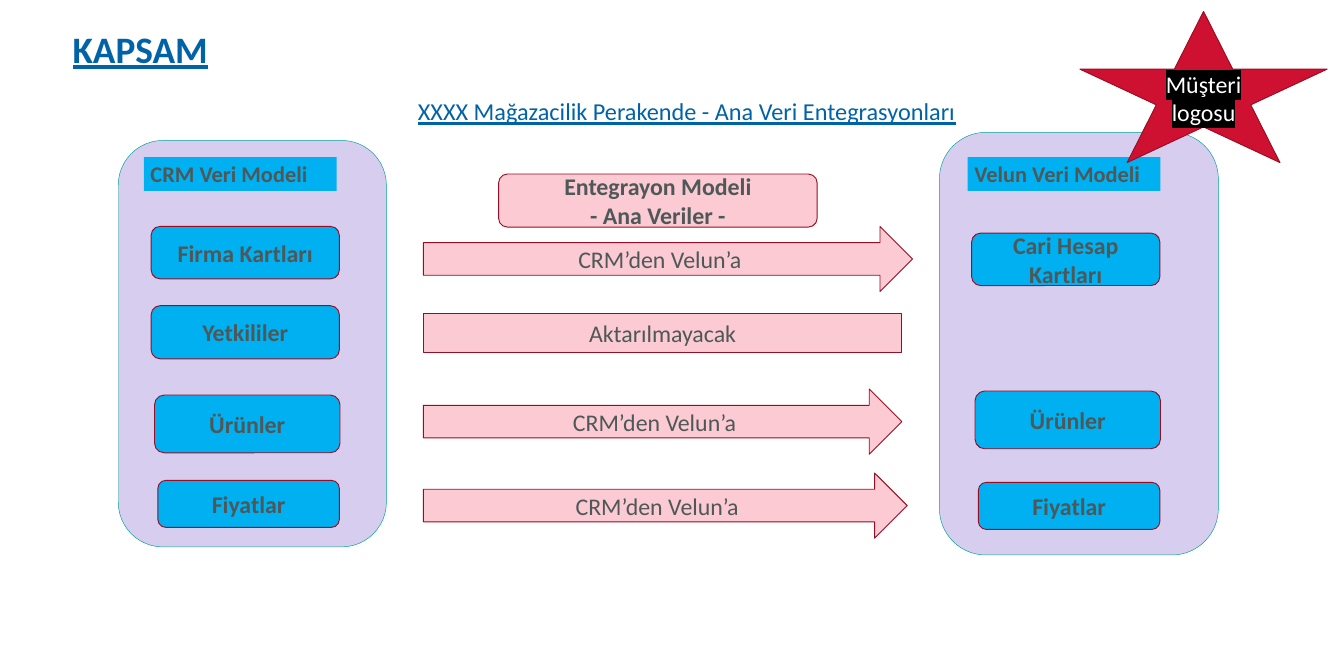
from dataclasses import dataclass
from typing import NamedTuple, Optional

from lxml.etree import SubElement
from pptx import Presentation
from pptx.dml.color import RGBColor
from pptx.enum.shapes import MSO_SHAPE
from pptx.enum.text import MSO_ANCHOR, MSO_AUTO_SIZE, PP_ALIGN
from pptx.oxml.ns import qn
from pptx.util import Inches, Pt


@dataclass(frozen=True)
class Theme:
    font: str = "Calibri"
    heading: str = "0063A8"
    text: str = "4F5858"
    white: str = "FFFFFF"
    highlight: str = "000000"
    panel: str = "D7CEEF"
    panel_line: str = "00A19B"
    card: str = "00B0F0"
    flow: str = "FBCAD2"
    star: str = "CE1130"
    outline: str = "980D24"
    title_size: float = 40
    subtitle_size: float = 26
    label_size: float = 24
    body_size: float = 25.6


class Area(NamedTuple):
    left: float
    top: float
    width: float
    height: float


class Card(NamedTuple):
    text: str
    area: Area


class Flow(NamedTuple):
    text: str
    kind: MSO_SHAPE
    area: Area


class Model(NamedTuple):
    name: str
    panel: Area
    label: Area
    cards: list[Card]


THEME = Theme()
FLOW_LEFT = 6.3
TO_VELUN = "CRM’den Velun’a"

MODELS = [
    Model("CRM Veri Modeli", Area(1.76, 2.09, 3.99, 6.05), Area(2.14, 2.34, 2.87, 0.5), [
        Card("Firma Kartları", Area(2.25, 3.37, 2.8, 0.78)),
        Card("Yetkililer", Area(2.25, 4.55, 2.8, 0.79)),
        Card("Ürünler", Area(2.3, 5.88, 2.76, 0.86)),
        Card("Fiyatlar", Area(2.35, 7.15, 2.7, 0.7)),
    ]),
    Model("Velun Veri Modeli", Area(13.98, 1.97, 4.15, 6.29), Area(14.4, 2.34, 2.87, 0.5), [
        Card("Cari Hesap Kartları", Area(14.46, 3.47, 2.8, 0.78)),
        Card("Ürünler", Area(14.51, 5.82, 2.76, 0.86)),
        Card("Fiyatlar", Area(14.56, 7.18, 2.7, 0.7)),
    ]),
]

FLOWS = [
    Flow(TO_VELUN, MSO_SHAPE.RIGHT_ARROW, Area(FLOW_LEFT, 3.37, 7.28, 0.97)),
    Flow("Aktarılmayacak", MSO_SHAPE.RECTANGLE, Area(FLOW_LEFT, 4.66, 7.12, 0.59)),
    Flow(TO_VELUN, MSO_SHAPE.RIGHT_ARROW, Area(FLOW_LEFT, 5.79, 7.12, 0.97)),
    Flow(TO_VELUN, MSO_SHAPE.RIGHT_ARROW, Area(FLOW_LEFT, 7.04, 7.2, 0.97)),
]


def inches(area: Area) -> list:
    return [Inches(value) for value in area]


def write(box, lines: list[str], size: float, color: str = THEME.text, bold: bool = False,
          underline: bool = False, align: PP_ALIGN = PP_ALIGN.CENTER,
          anchor: MSO_ANCHOR = MSO_ANCHOR.MIDDLE, wrap: bool = True) -> None:
    frame = box.text_frame
    frame.auto_size = MSO_AUTO_SIZE.NONE
    frame.word_wrap = wrap
    frame.vertical_anchor = anchor
    frame.text = "\n".join(lines)
    for para in frame.paragraphs:
        para.alignment = align
        font = para.font
        font.name, font.size = THEME.font, Pt(size)
        font.bold, font.underline = bold, underline
        font.color.rgb = RGBColor.from_string(color)


def draw(page, kind: MSO_SHAPE, area: Area, fill: str,
         line: Optional[str] = THEME.outline, weight: float = 1):
    shape = page.shapes.add_shape(kind, *inches(area))
    shape.shadow.inherit = False
    shape.fill.solid()
    shape.fill.fore_color.rgb = RGBColor.from_string(fill)
    if line:
        shape.line.color.rgb = RGBColor.from_string(line)
        shape.line.width = Pt(weight)
    else:
        shape.line.fill.background()
    return shape


def draw_model(page, model: Model) -> None:
    draw(page, MSO_SHAPE.ROUNDED_RECTANGLE, model.panel, THEME.panel, THEME.panel_line, 0.5)
    label = draw(page, MSO_SHAPE.RECTANGLE, model.label, THEME.card, None)
    write(label, [model.name], THEME.label_size, bold=True,
          align=PP_ALIGN.LEFT, anchor=MSO_ANCHOR.TOP)
    for card in model.cards:
        box = draw(page, MSO_SHAPE.ROUNDED_RECTANGLE, card.area, THEME.card)
        write(box, [card.text], THEME.body_size, bold=True)


def highlight(span, color: str) -> None:
    mark = SubElement(span._r.get_or_add_rPr(), qn("a:highlight"))
    SubElement(mark, qn("a:srgbClr"), val=color)


def main() -> None:
    deck = Presentation()
    deck.slide_width, deck.slide_height = Inches(20), Inches(9.6)
    page = deck.slides.add_slide(deck.slide_layouts[5])

    # Title and subtitle
    title = page.shapes.title
    title.left, title.top, title.width, title.height = inches(Area(0.98, 0.34, 4.57, 0.77))
    write(title, ["KAPSAM"], THEME.title_size, THEME.heading, bold=True, underline=True,
          align=PP_ALIGN.LEFT, anchor=MSO_ANCHOR.TOP)
    subtitle = page.shapes.add_textbox(*inches(Area(6.12, 1.39, 8.36, 0.54)))
    write(subtitle, ["XXXX Mağazacilik Perakende - Ana Veri Entegrasyonları"],
          THEME.subtitle_size, THEME.heading, underline=True,
          align=PP_ALIGN.LEFT, anchor=MSO_ANCHOR.TOP, wrap=False)

    # Data models on both sides
    for model in MODELS:
        draw_model(page, model)

    # Integration flows between them
    for flow in FLOWS:
        write(draw(page, flow.kind, flow.area, THEME.flow), [flow.text], THEME.body_size)
    heading = draw(page, MSO_SHAPE.ROUNDED_RECTANGLE, Area(7.42, 2.59, 4.74, 0.79), THEME.flow)
    write(heading, ["Entegrayon Modeli", "- Ana Veriler -"], THEME.body_size, bold=True)

    # Customer logo marker
    star = draw(page, MSO_SHAPE.STAR_5_POINT, Area(16.07, 0.17, 3.68, 2.25), THEME.star)
    write(star, ["Müşteri logosu"], THEME.body_size, THEME.white)
    highlight(star.text_frame.paragraphs[0].runs[0], THEME.highlight)

    deck.save("out.pptx")


if __name__ == "__main__":
    main()
